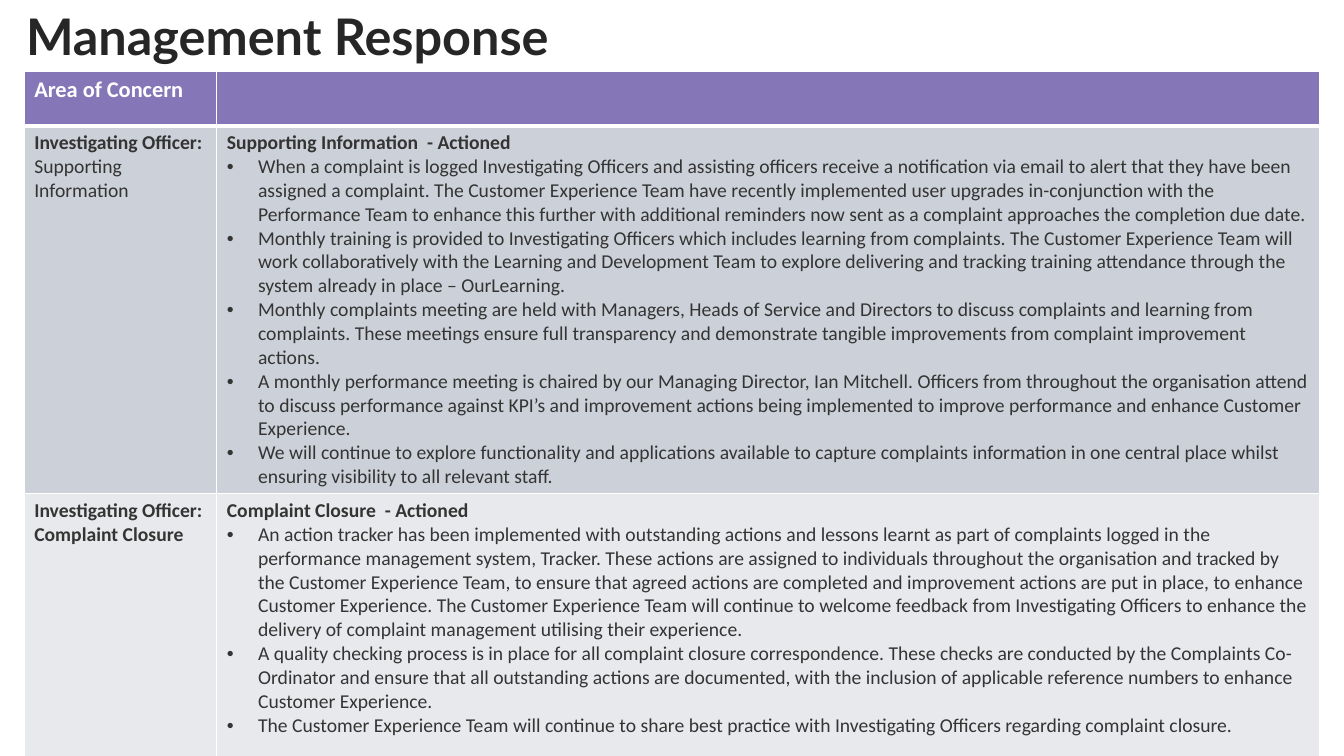
"""Build the Management Response slide: a title above a table of concerns and actions."""
from collections import namedtuple

from lxml.etree import SubElement
from pptx import Presentation
from pptx.dml.color import RGBColor
from pptx.oxml.ns import qn
from pptx.util import Inches, Pt

Theme = namedtuple("Theme", "title header text white head_fill row_fills title_size head_size body_size title_font font")
theme = Theme(
    title="262626", header="FFFFFF", text="343433", white="FFFFFF",
    head_fill="8577B7", row_fills=("CCD0D9", "E7E9ED"),
    title_size=36, head_size=16, body_size=14,
    title_font="Lato", font="Calibri",
)

concerns = [
    {
        "area": "Supporting Information",
        "area_bold": False,
        "heading": "Supporting Information  - Actioned",
        "actions": [
            "When a complaint is logged Investigating Officers and assisting officers receive a notification via email to alert that they have been assigned a complaint. The Customer Experience Team have recently implemented user upgrades in-conjunction with the Performance Team to enhance this further with additional reminders now sent as a complaint approaches the completion due date.",
            "Monthly training is provided to Investigating Officers which includes learning from complaints. The Customer Experience Team will work collaboratively with the Learning and Development Team to explore delivering and tracking training attendance through the system already in place – OurLearning.",
            "Monthly complaints meeting are held with Managers, Heads of Service and Directors to discuss complaints and learning from complaints. These meetings ensure full transparency and demonstrate tangible improvements from complaint improvement actions.",
            "A monthly performance meeting is chaired by our Managing Director, Ian Mitchell. Officers from throughout the organisation attend to discuss performance against KPI’s and improvement actions being implemented to improve performance and enhance Customer Experience.",
            "We will continue to explore functionality and applications available to capture complaints information in one central place whilst ensuring visibility to all relevant staff.",
        ],
    },
    {
        "area": "Complaint Closure",
        "area_bold": True,
        "heading": "Complaint Closure  - Actioned",
        "actions": [
            "An action tracker has been implemented with outstanding actions and lessons learnt as part of complaints logged in the performance management system, Tracker. These actions are assigned to individuals throughout the organisation and tracked by the Customer Experience Team, to ensure that agreed actions are completed and improvement actions are put in place, to enhance Customer Experience. The Customer Experience Team will continue to welcome feedback from Investigating Officers to enhance the delivery of complaint management utilising their experience.",
            "A quality checking process is in place for all complaint closure correspondence. These checks are conducted by the Complaints Co-Ordinator and ensure that all outstanding actions are documented, with the inclusion of applicable reference numbers to enhance Customer Experience.",
            "The Customer Experience Team will continue to share best practice with Investigating Officers regarding complaint closure.",
        ],
    },
]


def add_text(tf, text, size=theme.body_size, color=theme.text, font=theme.font, bold=False, bullet=False):
    """Write one paragraph, using the empty first paragraph when there is one."""
    p = tf.paragraphs[-1] if not tf.text else tf.add_paragraph()
    r = p.add_run()
    r.text = text
    r.font.size = Pt(size)
    r.font.name = font
    r.font.bold = bold
    r.font.color.rgb = RGBColor.from_string(color)
    if bullet:
        pPr = p._p.get_or_add_pPr()
        pPr.set("marL", str(Inches(0.31)))
        pPr.set("indent", str(-Inches(0.31)))
        SubElement(pPr, qn("a:buFont"), typeface="Arial")
        SubElement(pPr, qn("a:buChar"), char="•")


def style_cell(cell, fill, bottom=1):
    """Fill a cell and draw its white borders."""
    tcPr = cell._tc.get_or_add_tcPr()
    for side, width in (("lnL", 1), ("lnR", 1), ("lnT", 1), ("lnB", bottom)):
        ln = SubElement(tcPr, qn(f"a:{side}"), w=str(Pt(width)))
        SubElement(SubElement(ln, qn("a:solidFill")), qn("a:srgbClr"), val=theme.white)
    cell.fill.solid()
    cell.fill.fore_color.rgb = RGBColor.from_string(fill)


prs = Presentation()
prs.slide_width, prs.slide_height = Inches(13.33), Inches(7.5)
s = prs.slides.add_slide(prs.slide_layouts[6])

table = s.shapes.add_table(3, 2, Inches(0.24), Inches(0.71), Inches(12.85), Inches(6.65)).table
for column, width in zip(table.columns, (1.91, 10.94)):
    column.width = Inches(width)
for row, height in zip(table.rows, (0.54, 3.4, 2.71)):
    row.height = Inches(height)

for cell in table.rows[0].cells:
    style_cell(cell, theme.head_fill, bottom=3)
add_text(table.cell(0, 0).text_frame, "Area of Concern", size=theme.head_size, color=theme.header, bold=True)

for i, (concern, fill) in enumerate(zip(concerns, theme.row_fills), start=1):
    area, response = table.rows[i].cells
    for cell in (area, response):
        style_cell(cell, fill)
    add_text(area.text_frame, "Investigating Officer:", bold=True)
    add_text(area.text_frame, concern["area"], bold=concern["area_bold"])
    add_text(response.text_frame, concern["heading"], bold=True)
    for action in concern["actions"]:
        add_text(response.text_frame, action, bullet=True)

sp = s.shapes.add_textbox(Inches(0.16), Inches(0), Inches(11.83), Inches(0.71))
sp.text_frame.word_wrap = True
add_text(sp.text_frame, "Management Response", size=theme.title_size, color=theme.title, font=theme.title_font, bold=True)

prs.save("out.pptx")
